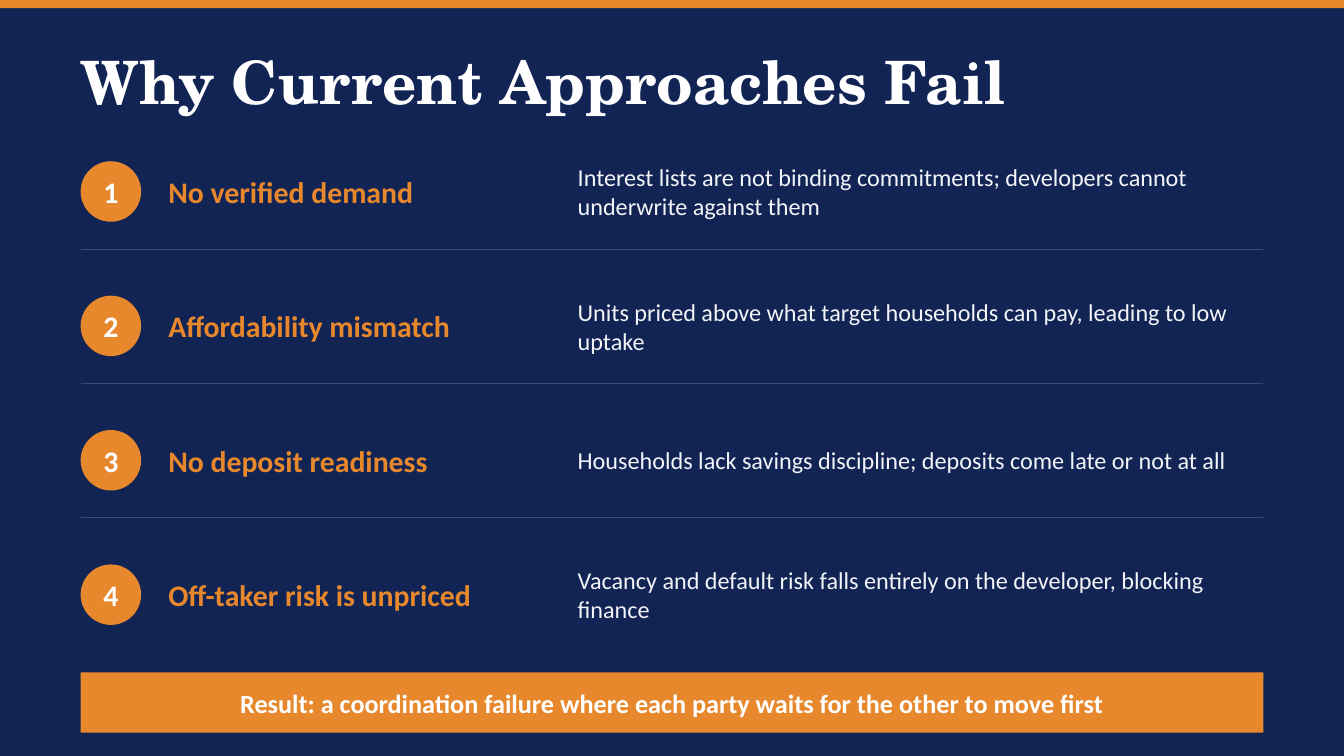
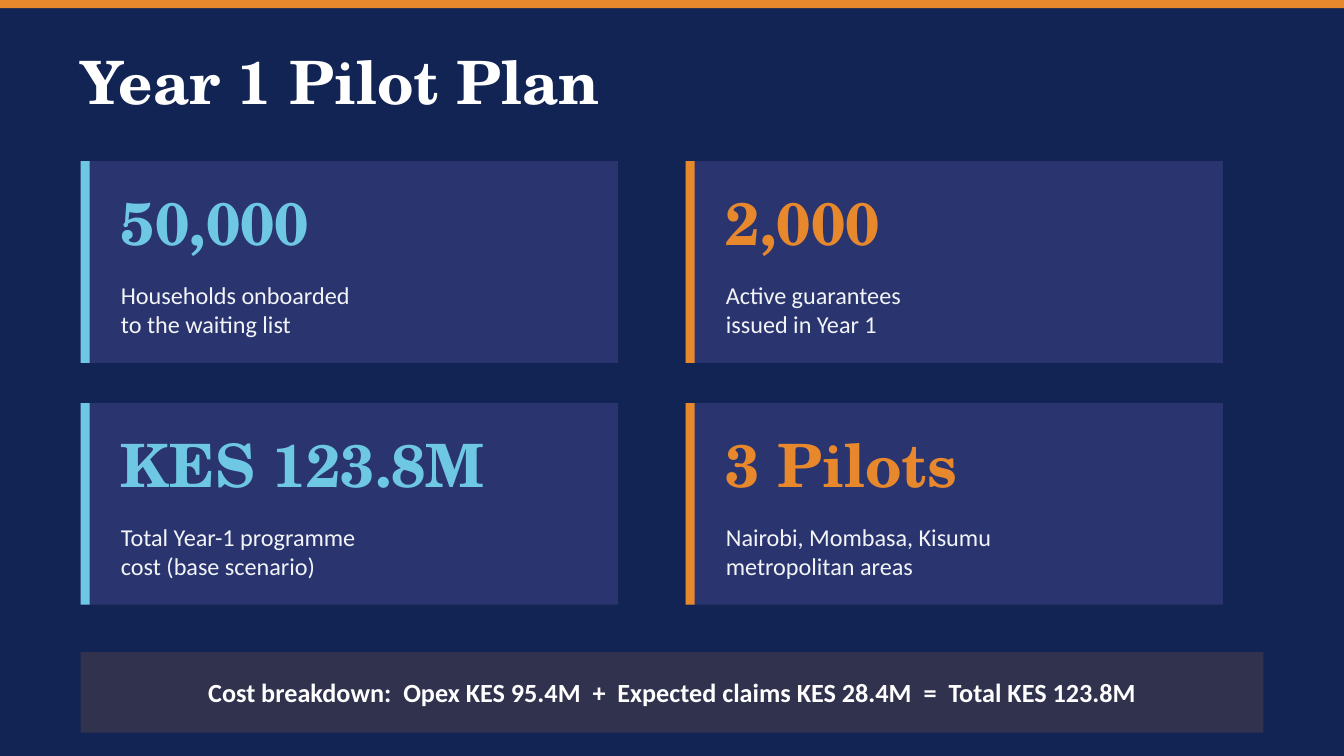
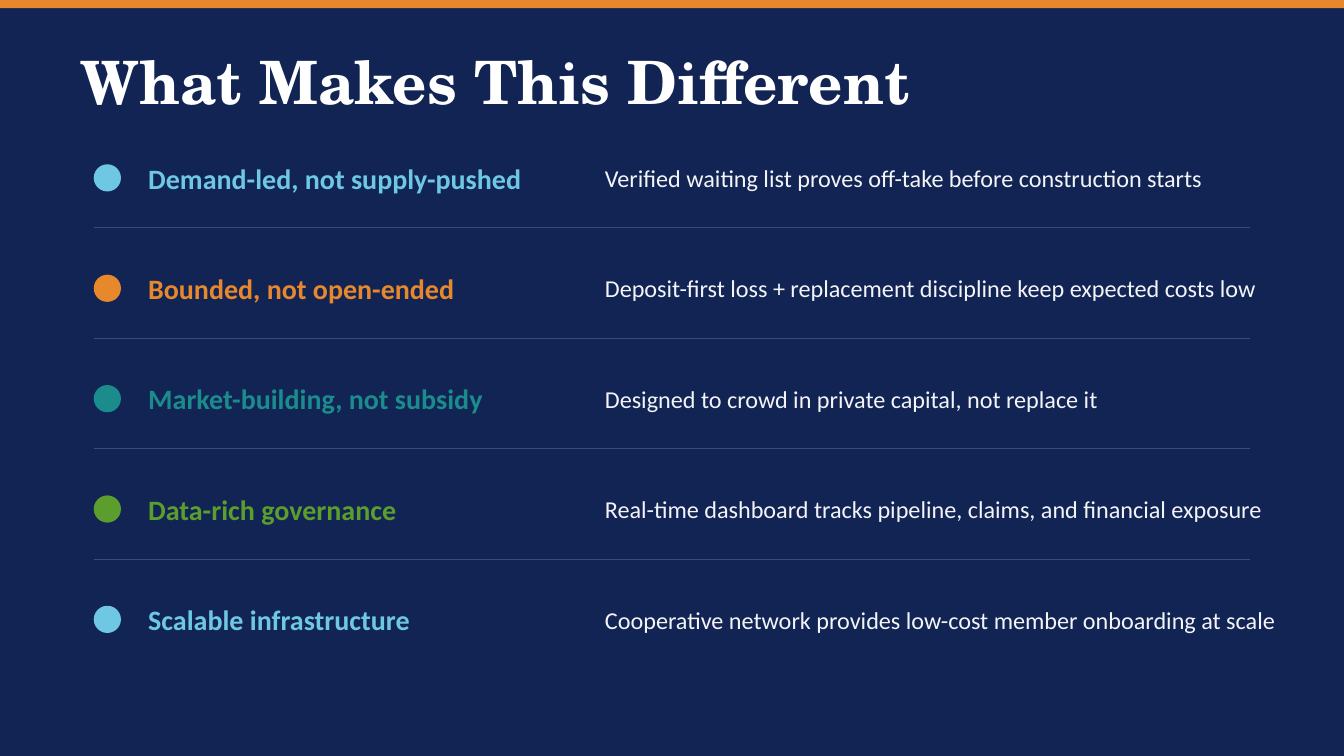
from dataclasses import dataclass

from lxml import etree
from pptx import Presentation
from pptx.dml.color import RGBColor
from pptx.enum.shapes import MSO_CONNECTOR, MSO_SHAPE
from pptx.enum.text import MSO_ANCHOR, MSO_AUTO_SIZE, PP_ALIGN
from pptx.oxml.ns import qn
from pptx.shapes.autoshape import Shape
from pptx.slide import Slide
from pptx.util import Inches, Pt

RECT, OVAL = MSO_SHAPE.RECTANGLE, MSO_SHAPE.OVAL
STRAIGHT = MSO_CONNECTOR.STRAIGHT
LEFT, CENTER = PP_ALIGN.LEFT, PP_ALIGN.CENTER
MIDDLE = MSO_ANCHOR.MIDDLE
FIXED = MSO_AUTO_SIZE.NONE

COLORS = {
    "navy": "122454",
    "panel": "2A3570",
    "rule": "3A4A7A",
    "orange": "E8882D",
    "sky": "6EC8E4",
    "teal": "1A8C8C",
    "green": "5B9E2E",
    "white": "FFFFFF",
    "pale": "F2F4F7",
}
SERIF, SANS = "TeX Gyre Schola", "Calibri"
WIDTH, HEIGHT = 13.33, 7.5
MARGIN = 0.8
BODY = 17.3
NOTE = 18.7
LARGE = 42.7


@dataclass(frozen=True)
class Box:
    left: float
    top: float
    width: float
    height: float

    def lengths(self) -> tuple:
        return tuple(Inches(v) for v in (self.left, self.top, self.width, self.height))


@dataclass(frozen=True)
class Font:
    size: float
    color: str
    bold: bool = True
    name: str = SANS


@dataclass(frozen=True)
class Row:
    head: str
    detail: str
    color: str = "orange"
    mark: str = ""


@dataclass(frozen=True)
class Grid:
    """Measures of a list whose rows hold a disc, a head and a detail."""
    left: float
    right: float
    top: float
    last: float
    height: float
    disc: float
    head: float
    head_width: float
    detail: float
    detail_width: float
    drop: float
    size: float


@dataclass(frozen=True)
class Card:
    value: str
    label: str
    color: str


TITLE_BOX = Box(MARGIN, 0.4, 10.67, 0.8)
TITLE_FONT = Font(LARGE, "white", name=SERIF)
BODY_FONT = Font(BODY, "pale", bold=False)
NOTE_FONT = Font(NOTE, "white")

FLAWS = Grid(MARGIN, 12.53, 1.6, 5.6, 0.6, 0.6, 1.67, 4, 5.73, 6.93, 0.87, 21.3)
MERITS = Grid(0.93, 12.4, 1.53, 5.91, 0.47, 0.27, 1.47, 4.27, 6, 6.67, 0.73, 20)

FLAW_ROWS = [
    Row("No verified demand",
        "Interest lists are not binding commitments; developers cannot underwrite against them",
        mark="1"),
    Row("Affordability mismatch",
        "Units priced above what target households can pay, leading to low uptake",
        mark="2"),
    Row("No deposit readiness",
        "Households lack savings discipline; deposits come late or not at all",
        mark="3"),
    Row("Off-taker risk is unpriced",
        "Vacancy and default risk falls entirely on the developer, blocking finance",
        mark="4"),
]
MERIT_ROWS = [
    Row("Demand-led, not supply-pushed",
        "Verified waiting list proves off-take before construction starts", "sky"),
    Row("Bounded, not open-ended",
        "Deposit-first loss + replacement discipline keep expected costs low", "orange"),
    Row("Market-building, not subsidy",
        "Designed to crowd in private capital, not replace it", "teal"),
    Row("Data-rich governance",
        "Real-time dashboard tracks pipeline, claims, and financial exposure", "green"),
    Row("Scalable infrastructure",
        "Cooperative network provides low-cost member onboarding at scale", "sky"),
]
CARDS = [
    Card("50,000", "Households onboarded\nto the waiting list", "sky"),
    Card("2,000", "Active guarantees\nissued in Year 1", "orange"),
    Card("KES 123.8M", "Total Year-1 programme\ncost (base scenario)", "sky"),
    Card("3 Pilots", "Nairobi, Mombasa, Kisumu\nmetropolitan areas", "orange"),
]
COSTS = ["Cost breakdown:", "Opex KES 95.4M", "+", "Expected claims KES 28.4M",
         "=", "Total KES 123.8M"]


def rgb(color: str) -> RGBColor:
    return RGBColor.from_string(COLORS[color])


def style(shape: Shape, font: Font, align: PP_ALIGN = LEFT) -> None:
    frame = shape.text_frame
    frame.word_wrap = True
    frame.auto_size = FIXED
    frame.vertical_anchor = MIDDLE
    frame.margin_left = frame.margin_right = 0
    frame.margin_top = frame.margin_bottom = 0
    for para in frame.paragraphs:
        para.alignment = align
        for run in para.runs:
            run.font.name = font.name
            run.font.size = Pt(font.size)
            run.font.bold = font.bold
            run.font.color.rgb = rgb(font.color)


def add_text(slide: Slide, box: Box, text: str, font: Font) -> None:
    shape = slide.shapes.add_textbox(*box.lengths())
    shape.text_frame.text = text
    style(shape, font)


def add_block(slide: Slide, box: Box, color: str, kind: MSO_SHAPE = RECT) -> Shape:
    shape = slide.shapes.add_shape(kind, *box.lengths())
    shape.shadow.inherit = False
    shape.fill.solid()
    shape.fill.fore_color.rgb = rgb(color)
    shape.line.fill.background()
    return shape


def add_rule(slide: Slide, left: float, right: float, top: float) -> None:
    rule = slide.shapes.add_connector(
        STRAIGHT, Inches(left), Inches(top), Inches(right), Inches(top))
    rule.line.color.rgb = rgb("rule")
    rule.line.width = Pt(0.5)
    etree.SubElement(rule._element.spPr, qn("a:effectLst"))


def add_banner(slide: Slide, top: float, height: float, parts: list[str],
               alpha: int = 100) -> None:
    """Draw a full-width bar; its parts are set apart by widened spaces."""
    bar = add_block(slide, Box(MARGIN, top, 11.73, height), "orange")
    if alpha < 100:
        tint = bar._element.spPr.find(".//" + qn("a:srgbClr"))
        etree.SubElement(tint, qn("a:alpha"), val=str(alpha * 1000))
    para = bar.text_frame.paragraphs[0]
    para.text = parts[0]
    for part in parts[1:]:
        gap = para.add_run()
        gap.text = " "
        gap._r.get_or_add_rPr().set("spc", "420")
        para.add_run().text = part
    style(bar, NOTE_FONT, CENTER)


def add_list(slide: Slide, grid: Grid, rows: list[Row]) -> None:
    step = (grid.last - grid.top) / (len(rows) - 1)
    for i, row in enumerate(rows):
        top = grid.top + i * step
        inset = (grid.height - grid.disc) / 2
        disc = add_block(slide, Box(grid.left, top + inset, grid.disc, grid.disc),
                         row.color, OVAL)
        if row.mark:
            disc.text_frame.text = row.mark
            style(disc, Font(grid.size, "white"), CENTER)
        add_text(slide, Box(grid.head, top, grid.head_width, grid.height),
                 row.head, Font(grid.size, row.color))
        add_text(slide, Box(grid.detail, top, grid.detail_width, grid.height),
                 row.detail, BODY_FONT)
        if i < len(rows) - 1:
            add_rule(slide, grid.left, grid.right, top + grid.drop)


def add_card(slide: Slide, left: float, top: float, card: Card) -> None:
    add_block(slide, Box(left, top, 5.33, 2), "panel")
    add_block(slide, Box(left, top, 0.09, 2), card.color)
    add_text(slide, Box(left + 0.4, top + 0.13, 4.67, 0.93), card.value,
             Font(LARGE, card.color, name=SERIF))
    add_text(slide, Box(left + 0.4, top + 1.07, 4.67, 0.8), card.label, BODY_FONT)


def add_slide(deck: Presentation, text: str) -> Slide:
    slide = deck.slides.add_slide(deck.slide_layouts.get_by_name("Title Only"))
    add_block(slide, Box(0, 0, WIDTH, 0.08), "orange")
    title = slide.shapes.title
    title.left, title.top, title.width, title.height = TITLE_BOX.lengths()
    title.text_frame.text = text
    style(title, TITLE_FONT)
    return slide


def main() -> None:
    deck = Presentation()
    deck.slide_width, deck.slide_height = Inches(WIDTH), Inches(HEIGHT)
    ground = deck.slide_master.background.fill
    ground.solid()
    ground.fore_color.rgb = rgb("navy")

    flaws = add_slide(deck, "Why Current Approaches Fail")
    add_list(flaws, FLAWS, FLAW_ROWS)
    add_banner(flaws, 6.67, 0.6, [
        "Result: a coordination failure where each party waits for the other to move first"])

    plan = add_slide(deck, "Year 1 Pilot Plan")
    for i, card in enumerate(CARDS):
        line, col = divmod(i, 2)
        add_card(plan, MARGIN + 6 * col, 1.6 + 2.4 * line, card)
    add_banner(plan, 6.47, 0.8, COSTS, alpha=15)

    merits = add_slide(deck, "What Makes This Different")
    add_list(merits, MERITS, MERIT_ROWS)

    deck.save("out.pptx")


if __name__ == "__main__":
    main()
